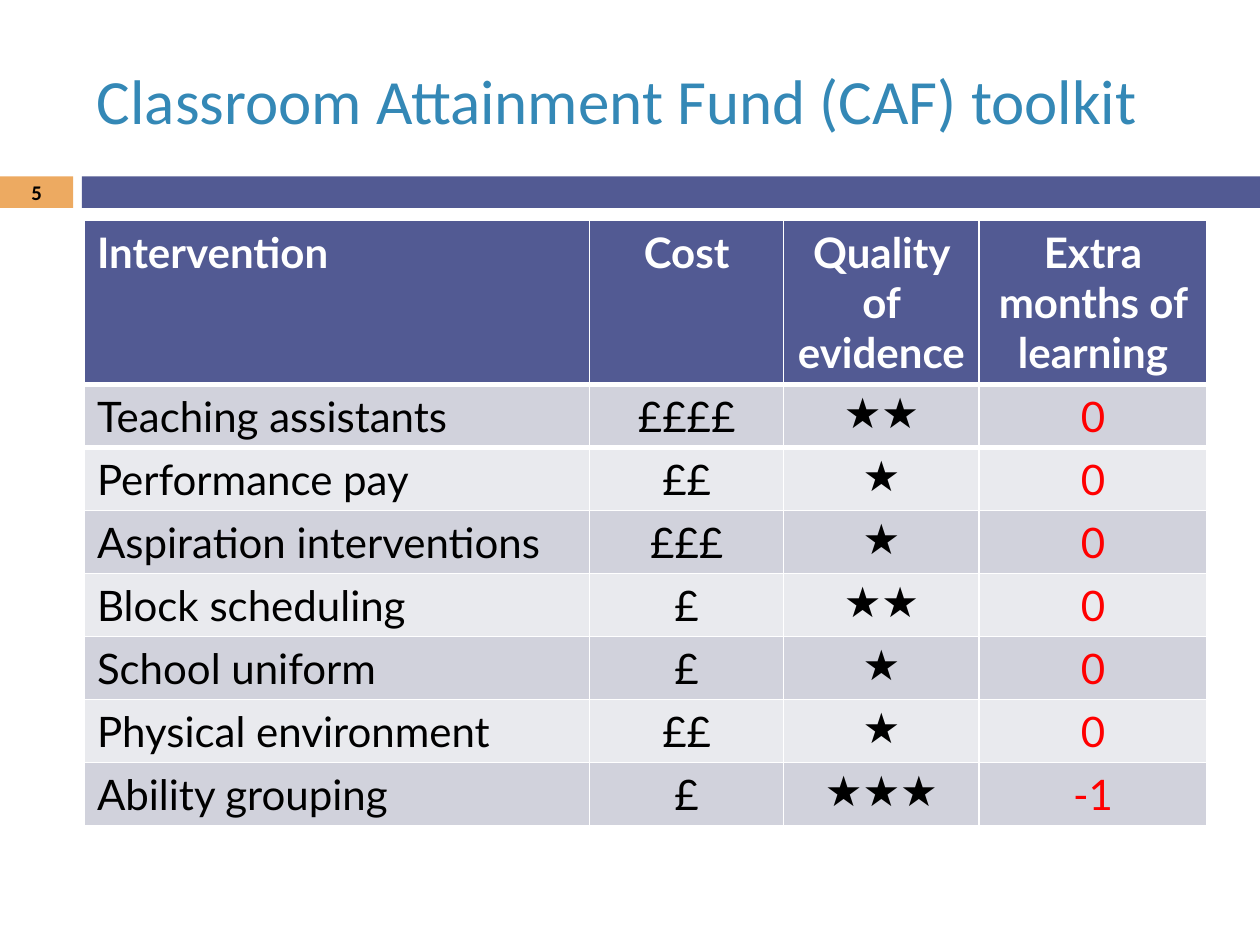
from lxml import etree
from pptx import Presentation
from pptx.dml.color import RGBColor
from pptx.enum.shapes import MSO_SHAPE
from pptx.enum.text import MSO_ANCHOR, PP_ALIGN
from pptx.oxml.ns import qn
from pptx.util import Inches, Pt

RECTANGLE = MSO_SHAPE.RECTANGLE
MIDDLE = MSO_ANCHOR.MIDDLE
LEFT, CENTER = PP_ALIGN.LEFT, PP_ALIGN.CENTER

INDIGO, ORANGE, BLUE = "525A93", "EDAA61", "3488B6"
BLACK, WHITE, RED = "000000", "FFFFFF", "FF0000"
BANDS = ("D1D2DC", "E9EAEE")

COLUMN_WIDTHS = (4.01, 1.54, 1.55, 1.81)
ROW_HEIGHT = 0.41
HEADERS = ("Intervention", "Cost", "Quality of evidence", "Extra months of learning")
# Intervention, cost rating, evidence rating, months gained
INTERVENTIONS = (
    ("Teaching assistants", 4, 2, 0),
    ("Performance pay", 2, 1, 0),
    ("Aspiration interventions", 3, 1, 0),
    ("Block scheduling", 1, 2, 0),
    ("School uniform", 1, 1, 0),
    ("Physical environment", 2, 1, 0),
    ("Ability grouping", 1, 3, -1),
)


def color(hex_string):
    return RGBColor.from_string(hex_string)


def write(text_frame, text, size, font, text_color, bold=False, alignment=LEFT):
    paragraph = text_frame.paragraphs[0]
    paragraph.alignment = alignment
    run = paragraph.add_run()
    run.text = text
    run.font.size = Pt(size)
    run.font.name = font
    run.font.bold = bold
    run.font.color.rgb = color(text_color)


def add_bar(slide, left, width, fill):
    shape = slide.shapes.add_shape(
        RECTANGLE, Inches(left), Inches(1.4), Inches(width), Inches(0.25))
    shape.shadow.inherit = False
    shape.fill.solid()
    shape.fill.fore_color.rgb = color(fill)
    shape.line.fill.background()


def add_text(slide, box, text, size, text_color, **style):
    text_frame = slide.shapes.add_textbox(*map(Inches, box)).text_frame
    text_frame.word_wrap = True
    text_frame.vertical_anchor = MIDDLE
    write(text_frame, text, size, "Calibri", text_color, **style)


def fill_cell(cell, fill, text, font, text_color, bold, alignment):
    cell.fill.solid()
    cell.fill.fore_color.rgb = color(fill)
    write(cell.text_frame, text, 24, font, text_color, bold, alignment)


def set_border(cell, side, width, line_color):
    # Border elements come before the fill in the cell properties
    border = etree.Element(qn(f"a:{side}"), w=str(Pt(width)))
    fill = etree.SubElement(border, qn("a:solidFill"))
    etree.SubElement(fill, qn("a:srgbClr"), val=line_color)
    cell._tc.get_or_add_tcPr().insert(0, border)


def add_toolkit_table(slide):
    row_count = len(INTERVENTIONS) + 1
    table = slide.shapes.add_table(
        row_count, len(HEADERS), Inches(0.67), Inches(1.75),
        Inches(sum(COLUMN_WIDTHS)), Inches(ROW_HEIGHT * row_count)).table
    for column, width in zip(table.columns, COLUMN_WIDTHS):
        column.width = Inches(width)
    for row in table.rows:
        row.height = Inches(ROW_HEIGHT)

    alignments = (LEFT, CENTER, CENTER, CENTER)
    fonts = ("Lato", "Lato", "Arial", "Lato")
    text_colors = (BLACK, BLACK, BLACK, RED)

    # Header row with a thick rule below it
    for column, header in enumerate(HEADERS):
        fill_cell(table.cell(0, column), INDIGO, header, "Lato", WHITE, True,
                  alignments[column])
        set_border(table.cell(0, column), "lnB", 3, WHITE)
        set_border(table.cell(1, column), "lnT", 3, WHITE)

    # Banded body rows
    for index, (name, cost, evidence, months) in enumerate(INTERVENTIONS):
        texts = (name, "£" * cost, "★" * evidence, str(months))
        for column, text in enumerate(texts):
            fill_cell(table.cell(index + 1, column), BANDS[index % 2], text,
                      fonts[column], text_colors[column], False, alignments[column])


def main():
    presentation = Presentation()
    presentation.slide_width = Inches(10)
    presentation.slide_height = Inches(7.5)
    slide = presentation.slides.add_slide(presentation.slide_layouts[6])

    # Divider bars
    add_bar(slide, 0, 0.58, ORANGE)
    add_bar(slide, 0.65, 9.35, INDIGO)

    # Title and slide number
    add_text(slide, (0.67, 0.25, 8.92, 1.08),
             "Classroom Attainment Fund (CAF) toolkit", 36, BLUE)
    add_text(slide, (0, 1.39, 0.58, 0.27), "5", 11.9, BLACK,
             bold=True, alignment=CENTER)

    add_toolkit_table(slide)
    presentation.save("out.pptx")


if __name__ == "__main__":
    main()
